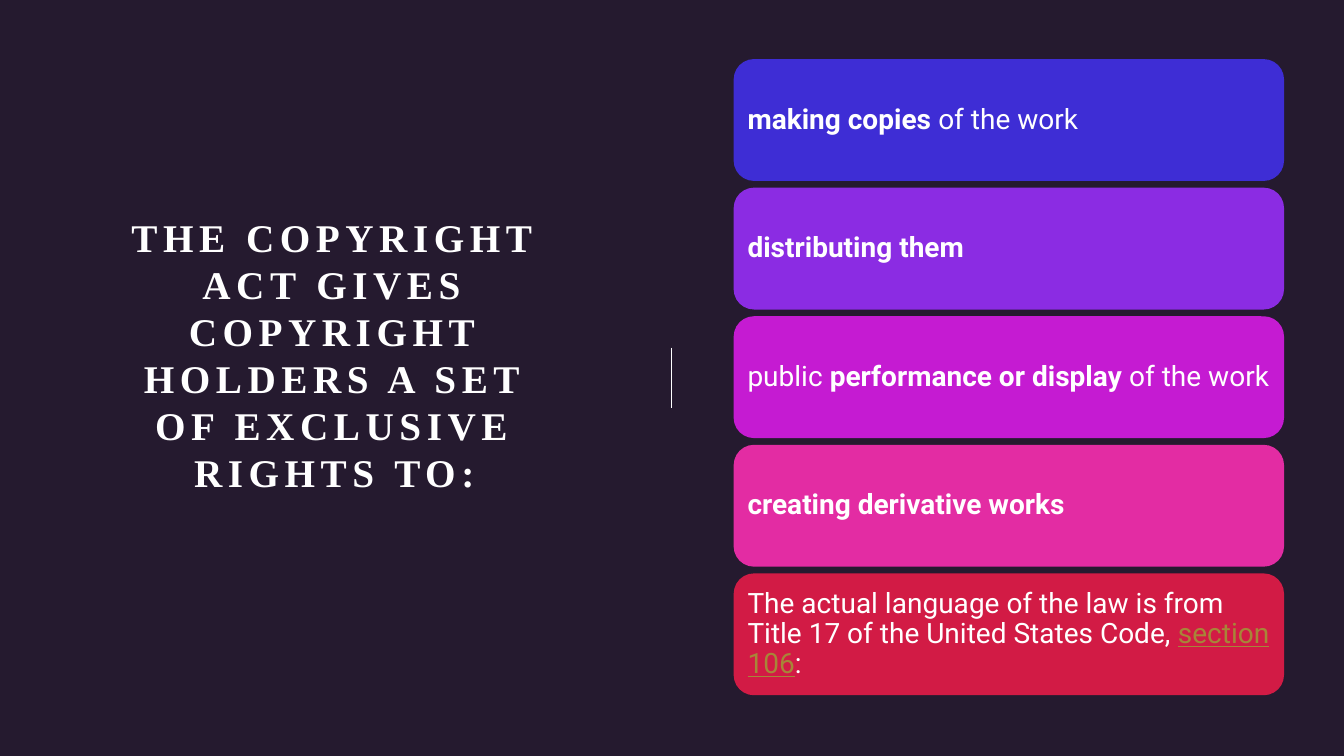
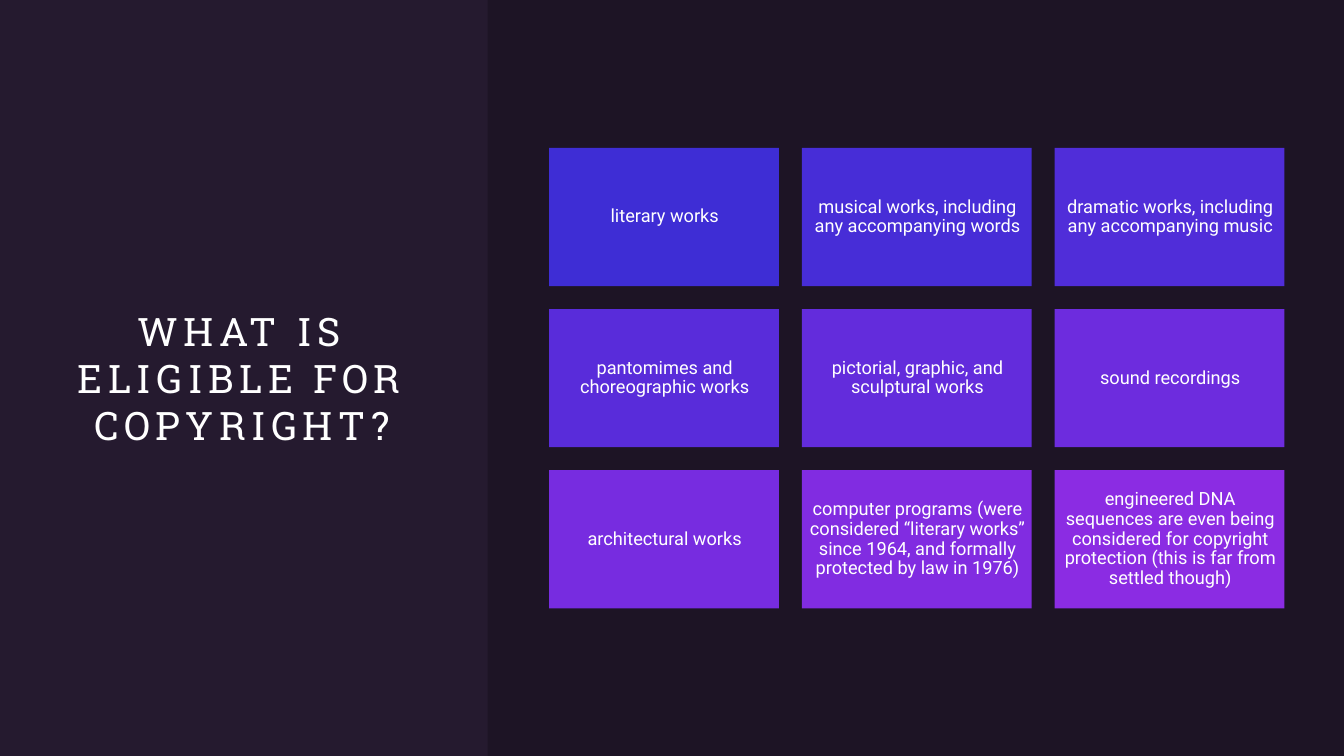
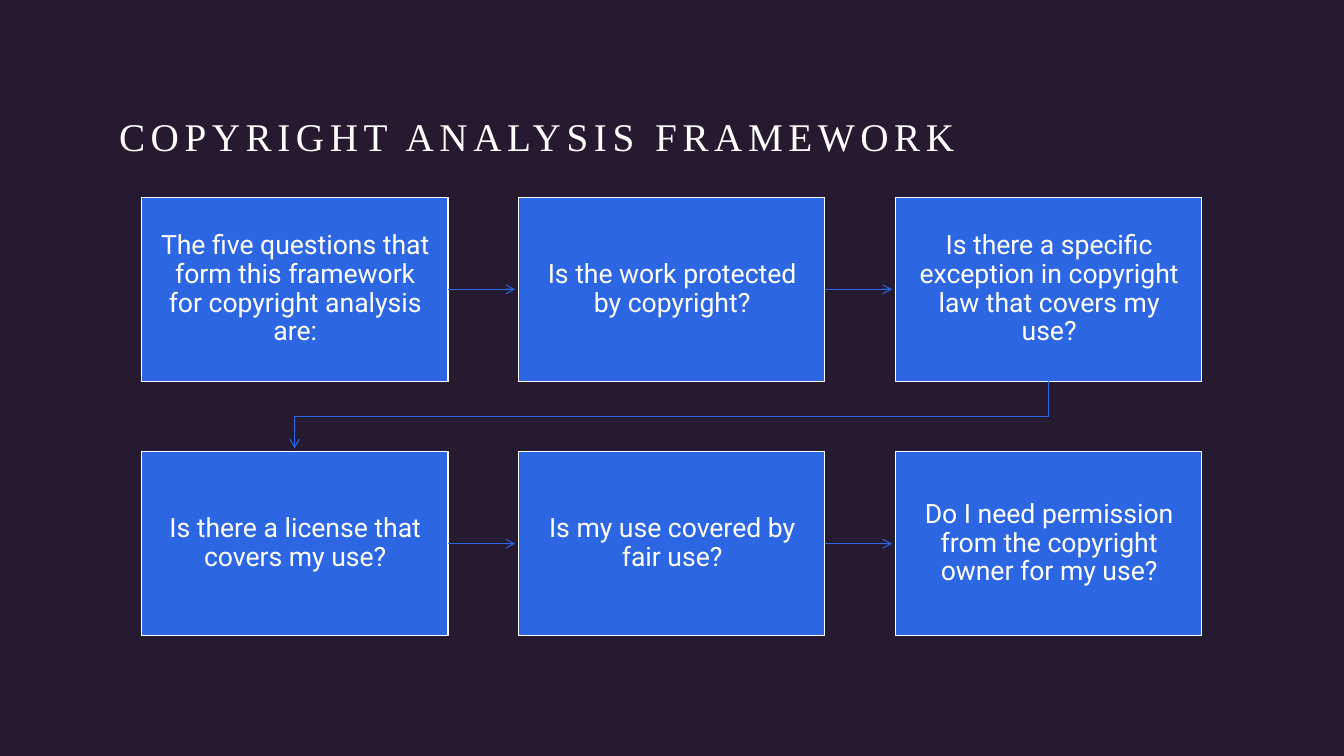
from pptx import Presentation
from pptx.dml.color import RGBColor
from pptx.enum.shapes import MSO_CONNECTOR, MSO_SHAPE
from pptx.enum.text import MSO_ANCHOR, PP_ALIGN
from pptx.oxml.ns import qn
from pptx.util import Cm, Pt
from lxml.etree import SubElement

rgb = RGBColor.from_string
BACK, WHITE, LINK, BLUE = "251A2F", "FFFFFF", "A88538", "2C66E3"
SERIF, SLAB, SANS = "Times New Roman", "Roboto Slab", "Roboto"

prs = Presentation()
prs.slide_width, prs.slide_height = Cm(33.87), Cm(19.05)


def add_title(text, x, y, w, h, font, bold=False, centred=True, bottom=0):
    """Start a slide with the shared background and title style."""
    s = prs.slides.add_slide(prs.slide_layouts[6])
    s.background.fill.solid()
    s.background.fill.fore_color.rgb = rgb(BACK)
    tf = s.shapes.add_textbox(Cm(x), Cm(y), Cm(w), Cm(h)).text_frame
    tf.word_wrap = True
    tf.margin_left = tf.margin_right = tf.margin_top = 0
    tf.margin_bottom = Cm(bottom)
    tf.vertical_anchor = MSO_ANCHOR.MIDDLE if centred else MSO_ANCHOR.TOP
    p = tf.paragraphs[0]
    p.alignment = PP_ALIGN.CENTER if centred else PP_ALIGN.LEFT
    p.line_spacing = Pt(33.6)
    r = p.add_run()
    r.text = text
    r.font.name, r.font.size, r.font.bold = font, Pt(28), bold
    r.font.color.rgb = rgb(WHITE)
    r._r.get_or_add_rPr().set("spc", "400")
    return s


def add_card(s, kind, x, y, w, h, fill, runs, size, margin, centred=True):
    """Add a filled card; runs are (text, style), style b is bold, u a link."""
    sp = s.shapes.add_shape(kind, Cm(x), Cm(y), Cm(w), Cm(h))
    sp.shadow.inherit = False
    sp.fill.solid()
    sp.fill.fore_color.rgb = rgb(fill)
    sp.line.fill.background()
    tf = sp.text_frame
    tf.word_wrap = True
    tf.vertical_anchor = MSO_ANCHOR.MIDDLE
    tf.margin_left = tf.margin_top = tf.margin_bottom = Cm(margin)
    tf.margin_right = Cm(margin - 0.03)
    p = tf.paragraphs[0]
    p.alignment = PP_ALIGN.CENTER if centred else PP_ALIGN.LEFT
    p.line_spacing = 0.9
    p.font.name, p.font.size = SANS, Pt(size)
    for text, style in runs:
        r = p.add_run()
        r.text = text
        r.font.name, r.font.size = SANS, Pt(size)
        r.font.bold, r.font.underline = style == "b", style == "u"
        r.font.color.rgb = rgb(LINK if style == "u" else WHITE)
    return sp


# Slide 1: exclusive rights
s = add_title("THE COPYRIGHT ACT GIVES COPYRIGHT HOLDERS A SET OF EXCLUSIVE RIGHTS TO:",
              3, 3, 10.85, 13.03, SERIF, bold=True, bottom=1.15)
divider = s.shapes.add_connector(MSO_CONNECTOR.STRAIGHT, Cm(16.93), Cm(8.76), Cm(16.93), Cm(10.29))
divider.line.color.rgb = rgb(WHITE)
divider.line.width = Pt(1)
SubElement(divider._element.spPr, qn("a:effectLst"))

rights = [
    ("3E2DD5", [("making copies", "b"), (" of the work", "")]),
    ("8B2CE3", [("distributing them", "b")]),
    ("C51BD2", [("public ", ""), ("performance or display", "b"), (" of the work", "")]),
    ("E32CA3", [("creating derivative works", "b")]),
    ("D21B45", [("The actual language of the law is from Title 17 of the United States Code, ", ""),
                ("section 106", "u"), (":", "")]),
]
for i, (fill, runs) in enumerate(rights):
    add_card(s, MSO_SHAPE.ROUNDED_RECTANGLE, 18.49, 1.49 + i * 3.24, 13.87, 3.07,
             fill, runs, 20, 0.2, centred=False)

# Slide 2: eligible works
s = add_title("WHAT IS ELIGIBLE FOR COPYRIGHT?", 1.49, 3, 9.22, 13.03, SLAB)
panel = s.shapes.add_shape(MSO_SHAPE.RECTANGLE, Cm(12.29), 0, Cm(21.58), prs.slide_height)
panel.shadow.inherit = False
panel.fill.solid()
panel.fill.fore_color.rgb = rgb("000000")
panel.line.fill.background()
SubElement(panel._element.spPr.find(".//" + qn("a:srgbClr")), qn("a:alpha"), val="20000")

works = [
    ("3E2DD5", "literary works"),
    ("472DD7", "musical works, including any accompanying words"),
    ("502DD9", "dramatic works, including any accompanying music"),
    ("592CDA", "pantomimes and choreographic works"),
    ("632CDC", "pictorial, graphic, and sculptural works"),
    ("6D2CDE", "sound recordings"),
    ("772CE0", "architectural works"),
    ("812CE1", "computer programs (were considered “literary works” since 1964, "
               "and formally protected by law in 1976)"),
    ("8B2CE3", "engineered DNA sequences are even being considered for copyright "
               "protection (this is far from settled though)"),
]
for i, (fill, text) in enumerate(works):
    row, col = divmod(i, 3)
    add_card(s, MSO_SHAPE.RECTANGLE, 13.84 + col * 6.37, 3.73 + row * 4.06, 5.79, 3.48,
             fill, [(text, "")], 13, 0.13)

# Slide 3: analysis framework
s = add_title("COPYRIGHT ANALYSIS FRAMEWORK", 3, 2.82, 27.86, 1.83, SERIF, centred=False)
questions = [
    "The five questions that form this framework for copyright analysis are:",
    "Is the work protected by copyright?",
    "Is there a specific exception in copyright law that covers my use?",
    "Is there a license that covers my use?",
    "Is my use covered by fair use?",
    "Do I need permission from the copyright owner for my use?",
]
left, top, w, h = 3.56, 4.97, 7.73, 4.64
dx, dy, short = 9.5, 6.41, 0.08
arrows = []
for i, text in enumerate(questions):
    row, col = divmod(i, 3)
    x, y = left + col * dx, top + row * dy
    card = add_card(s, MSO_SHAPE.RECTANGLE, x, y, w, h, BLUE, [(text, "")], 19, 0.38)
    card.line.color.rgb = rgb(WHITE)
    card.line.width = Pt(0.85)
    if col < 2:
        arrows.append(s.shapes.add_connector(MSO_CONNECTOR.STRAIGHT, Cm(x + w), Cm(y + h / 2),
                                             Cm(x + dx - short), Cm(y + h / 2)))

# Bent arrow from the first row to the second
start, end = left + 2 * dx + w / 2, left + w / 2
middle = top + (h + dy) / 2
pen = s.shapes.build_freeform(Cm(start), Cm(top + h))
pen.add_line_segments([(Cm(start), Cm(middle)), (Cm(end), Cm(middle)),
                       (Cm(end), Cm(top + dy - short))], close=False)
bend = pen.convert_to_shape()
bend.fill.background()
arrows.append(bend)

for arrow in arrows:
    arrow.line.color.rgb = rgb(BLUE)
    arrow.line.width = Pt(0.75)
    SubElement(arrow.line._get_or_add_ln(), qn("a:tailEnd"), type="arrow")
    SubElement(arrow._element.spPr, qn("a:effectLst"))

prs.save("out.pptx")
